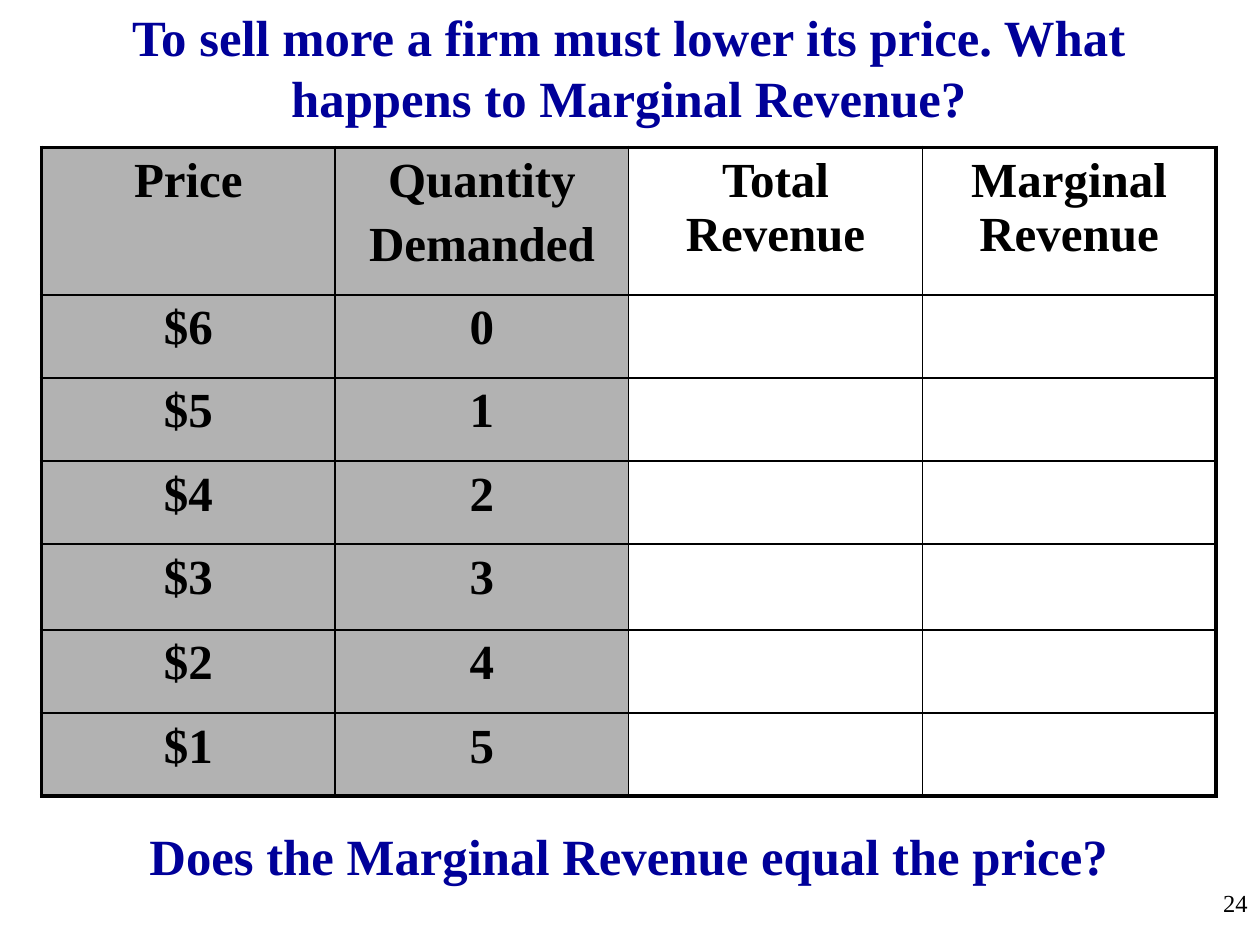
from dataclasses import dataclass

from lxml import etree
from pptx import Presentation
from pptx.dml.color import RGBColor
from pptx.enum.text import PP_ALIGN
from pptx.oxml.ns import qn
from pptx.util import Inches, Pt

CENTER, RIGHT = PP_ALIGN.CENTER, PP_ALIGN.RIGHT
FONT = "Times New Roman"
COLORS = {"heading": "000099", "ink": "000000", "given": "B2B2B2"}
OUTER, INNER = 2.25, 1
COL_WIDTH = 2.33
ROW_HEIGHTS = [1.17, 0.66, 0.66, 0.66, 0.68, 0.66, 0.66]
HEADER = ["Price", "Quantity\nDemanded", "Total Revenue", "Marginal Revenue"]
ROWS = [HEADER] + [[f"${6 - q}", str(q), "", ""] for q in range(6)]
GIVEN_COLUMNS = 2


@dataclass
class Label:
    text: str
    left: float
    top: float
    width: float
    height: float
    size: float
    color: str
    bold: bool = True
    align: PP_ALIGN = CENTER


LABELS = [
    Label("To sell more a firm must lower its price. What happens to Marginal Revenue?",
          0.33, 0, 9.33, 1.06, 29, "heading"),
    Label("Does the Marginal Revenue equal the price?", 0.33, 6.5, 9.33, 0.58, 29, "heading"),
    Label("24", 7.92, 7, 2.08, 0.5, 14, "ink", False, RIGHT),
]


def format_text(tf, size: float, color: str, bold: bool, align: PP_ALIGN) -> None:
    """Apply one alignment and font to all the text in a frame."""
    for p in tf.paragraphs:
        p.alignment = align
        for r in p.runs:
            r.font.name = FONT
            r.font.size = Pt(size)
            r.font.bold = bold
            r.font.color.rgb = RGBColor.from_string(COLORS[color])


def add_label(slide, label: Label) -> None:
    """Add a wrapped text box."""
    s = slide.shapes.add_textbox(Inches(label.left), Inches(label.top),
                                 Inches(label.width), Inches(label.height))
    tf = s.text_frame
    tf.word_wrap = True
    tf.text = label.text
    format_text(tf, label.size, label.color, label.bold, label.align)


def set_borders(cell, widths: dict[str, float]) -> None:
    """Draw solid borders of the given point widths around a cell."""
    tc_pr = cell._tc.get_or_add_tcPr()
    for side, width in widths.items():
        ln = etree.SubElement(tc_pr, qn(f"a:ln{side}"), w=str(Pt(width)))
        fill = etree.SubElement(ln, qn("a:solidFill"))
        etree.SubElement(fill, qn("a:srgbClr"), val=COLORS["ink"])


def add_revenue_table(slide) -> None:
    """Add the price and revenue table."""
    n_rows, n_cols = len(ROWS), len(HEADER)
    table = slide.shapes.add_table(
        n_rows, n_cols, Inches(0.33), Inches(1.17),
        Inches(COL_WIDTH * n_cols), Inches(sum(ROW_HEIGHTS))).table
    table.first_row = table.horz_banding = False
    for column in table.columns:
        column.width = Inches(COL_WIDTH)
    for i, (height, values) in enumerate(zip(ROW_HEIGHTS, ROWS)):
        table.rows[i].height = Inches(height)
        for j, value in enumerate(values):
            cell = table.cell(i, j)
            edges = {"L": j == 0, "R": j == n_cols - 1, "T": i == 0, "B": i == n_rows - 1}
            set_borders(cell, {side: OUTER if edge else INNER for side, edge in edges.items()})
            if j < GIVEN_COLUMNS:
                cell.fill.solid()
                cell.fill.fore_color.rgb = RGBColor.from_string(COLORS["given"])
            else:
                cell.fill.background()
            cell.text_frame.text = value
            format_text(cell.text_frame, 28, "ink", True, CENTER)
            for p in cell.text_frame.paragraphs:
                p.space_before = Pt(5.6)


def main() -> None:
    """Build and save the marginal revenue slide."""
    prs = Presentation()
    prs.slide_width, prs.slide_height = Inches(10), Inches(7.5)
    slide = prs.slides.add_slide(prs.slide_layouts[6])
    add_revenue_table(slide)
    for label in LABELS:
        add_label(slide, label)
    prs.save("out.pptx")


if __name__ == "__main__":
    main()
